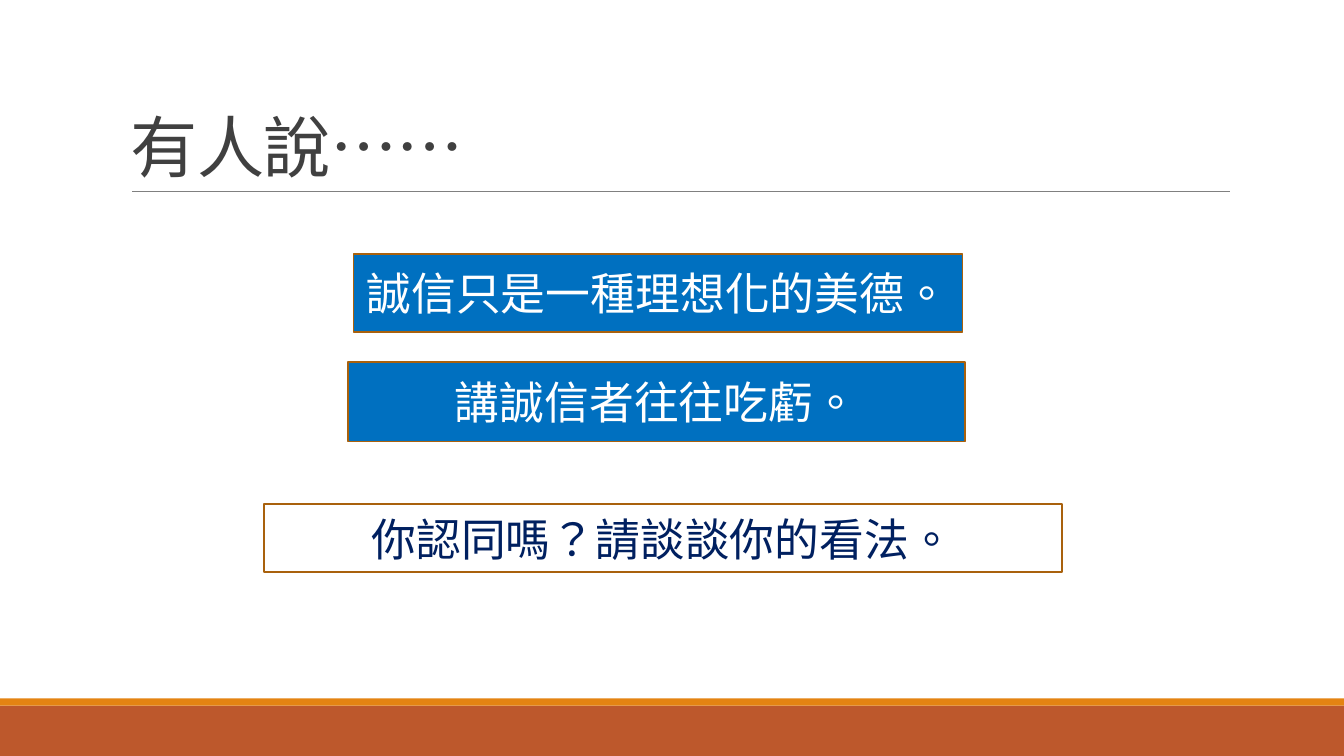
from lxml import etree
from pptx import Presentation
from pptx.dml.color import RGBColor
from pptx.enum.lang import MSO_LANGUAGE_ID
from pptx.enum.shapes import MSO_CONNECTOR, MSO_SHAPE
from pptx.enum.text import MSO_ANCHOR, PP_ALIGN
from pptx.oxml.ns import qn
from pptx.util import Cm, Pt

RECTANGLE = MSO_SHAPE.RECTANGLE
STRAIGHT = MSO_CONNECTOR.STRAIGHT
BOTTOM, MIDDLE = MSO_ANCHOR.BOTTOM, MSO_ANCHOR.MIDDLE
CENTER = PP_ALIGN.CENTER
CHINESE = MSO_LANGUAGE_ID.TRADITIONAL_CHINESE

COLORS = {
    "rust": "BD582C",
    "orange": "E48312",
    "rule": "808080",
    "title": "404040",
    "blue": "0070C0",
    "border": "A9610D",
    "white": "FFFFFF",
    "navy": "002060",
}
LATIN_FONT = "Calibri"
CHINESE_FONT = "Noto Sans CJK SC"
SLIDE_WIDTH, SLIDE_HEIGHT = 33.87, 19.05


def color(name):
    return RGBColor.from_string(COLORS[name])


def add_run(paragraph, text, size, color_name, font_name):
    run = paragraph.add_run()
    run.text = text
    run.font.size = Pt(size)
    run.font.name = font_name
    run.font.language_id = CHINESE
    run.font.color.rgb = color(color_name)
    properties = run.font._element
    east_asian = etree.SubElement(properties, qn("a:ea"))
    east_asian.set("typeface", CHINESE_FONT)
    return run


def add_rectangle(slide, left, top, width, height, fill=None, border=None):
    shape = slide.shapes.add_shape(
        RECTANGLE, Cm(left), Cm(top), Cm(width), Cm(height))
    shape.shadow.inherit = False
    if fill:
        shape.fill.solid()
        shape.fill.fore_color.rgb = color(fill)
    else:
        shape.fill.background()
    if border:
        shape.line.color.rgb = color(border)
        shape.line.width = Pt(1.25)
    else:
        shape.line.fill.background()
    return shape


def add_statement(slide, text, left, top, width, height, fill, text_color):
    shape = add_rectangle(slide, left, top, width, height, fill, "border")
    frame = shape.text_frame
    frame.word_wrap = True
    frame.vertical_anchor = MIDDLE
    paragraph = frame.paragraphs[0]
    paragraph.alignment = CENTER
    add_run(paragraph, text, 32, text_color, CHINESE_FONT)


def add_title(slide, text):
    box = slide.shapes.add_textbox(Cm(3.05), Cm(0.79), Cm(27.94), Cm(4.04))
    frame = box.text_frame
    frame.word_wrap = True
    frame.vertical_anchor = BOTTOM
    paragraph = frame.paragraphs[0]
    paragraph.line_spacing = 0.85
    run = add_run(paragraph, text, 48, "title", LATIN_FONT)
    run.font._element.set("spc", "-50")


def add_rule(slide, left, right, top):
    rule = slide.shapes.add_connector(
        STRAIGHT, Cm(left), Cm(top), Cm(right), Cm(top))
    rule.line.color.rgb = color("rule")
    rule.line.width = Pt(0.5)
    etree.SubElement(rule._element.spPr, qn("a:effectLst"))


def main():
    presentation = Presentation()
    presentation.slide_width = Cm(SLIDE_WIDTH)
    presentation.slide_height = Cm(SLIDE_HEIGHT)
    slide = presentation.slides.add_slide(presentation.slide_layouts[6])

    add_rectangle(slide, 0, 17.78, SLIDE_WIDTH, 1.27, "rust")
    add_rectangle(slide, 0, 17.6, SLIDE_WIDTH, 0.18, "orange")
    add_rule(slide, 3.33, 31, 4.82)
    add_title(slide, "有人說……")

    statements = [
        ("誠信只是一種理想化的美德。", 8.91, 6.4, 15.35, 1.97, "blue", "white"),
        ("講誠信者往往吃虧。", 8.77, 9.13, 15.56, 2, "blue", "white"),
        ("你認同嗎？請談談你的看法。", 6.65, 12.7, 20.12, 1.72, None, "navy"),
    ]
    for statement in statements:
        add_statement(slide, *statement)

    presentation.save("out.pptx")


if __name__ == "__main__":
    main()
